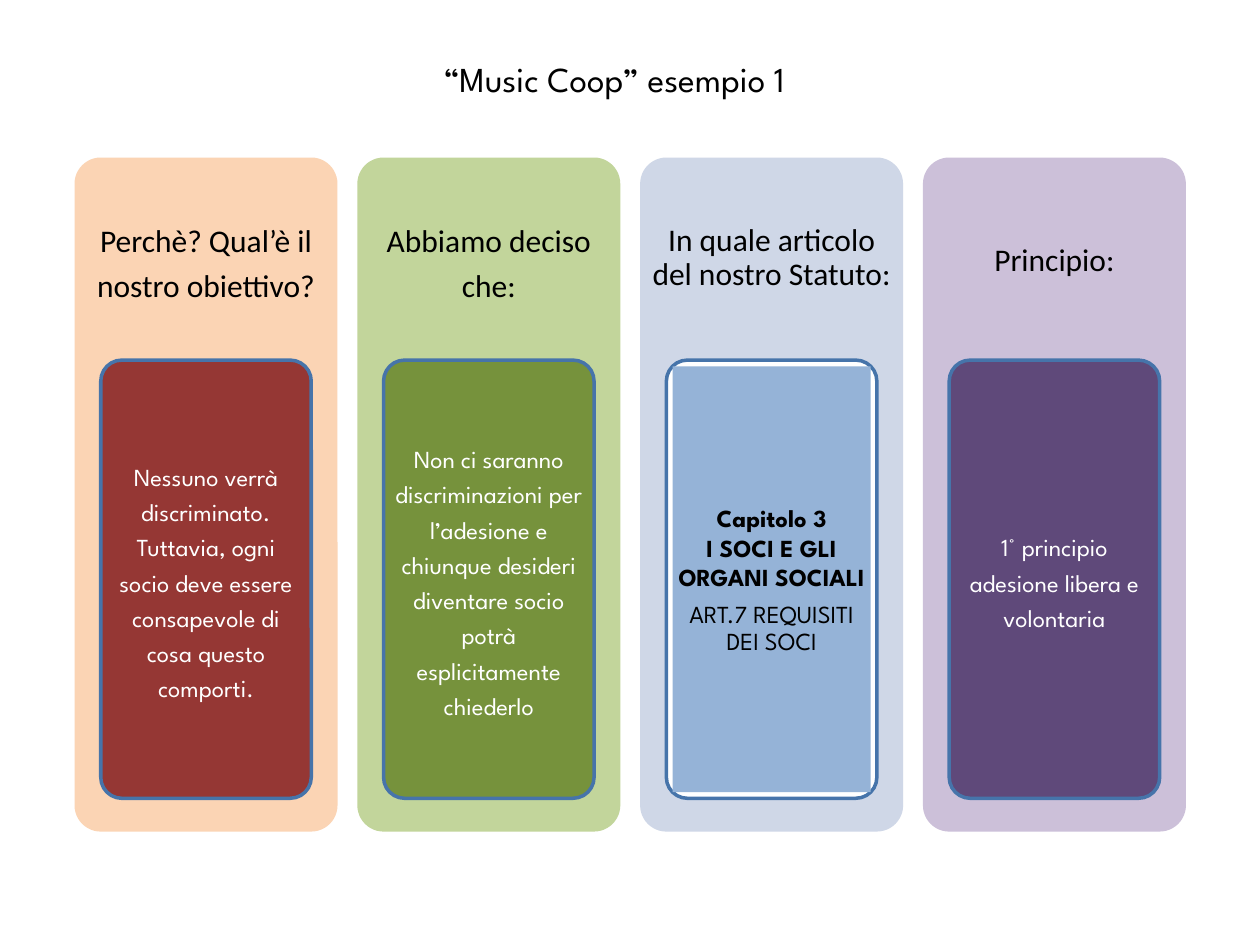
from pptx import Presentation
from pptx.dml.color import RGBColor
from pptx.enum.shapes import MSO_SHAPE as Shape
from pptx.enum.text import MSO_ANCHOR as Anchor, MSO_AUTO_SIZE as AutoSize, PP_ALIGN as Align
from pptx.util import Pt

BLACK = RGBColor(0x00, 0x00, 0x00)
WHITE = RGBColor(0xFF, 0xFF, 0xFF)
BORDER = RGBColor(0x46, 0x74, 0xAA)
PEACH = RGBColor(0xFB, 0xD4, 0xB4)
RED = RGBColor(0x95, 0x37, 0x34)
LIGHT_GREEN = RGBColor(0xC2, 0xD5, 0x9B)
GREEN = RGBColor(0x76, 0x92, 0x3C)
PALE_BLUE = RGBColor(0xCF, 0xD7, 0xE7)
BLUE = RGBColor(0x95, 0xB3, 0xD7)
LILAC = RGBColor(0xCC, 0xC0, 0xD9)
PURPLE = RGBColor(0x5F, 0x49, 0x7A)

HEADING_FONT = "Calibri"
BODY_FONT = "League Spartan"

COLUMN_LEFT, COLUMN_TOP = 42.6, 90
COLUMN_WIDTH, COLUMN_HEIGHT = 150.3, 385.2
COLUMN_STEP = 161.6
HEADING_HEIGHT = 115.6
CARD_WIDTH, CARD_HEIGHT, CARD_TOP = 120.3, 250.4, 205.8
CARD_INSET = (COLUMN_WIDTH - CARD_WIDTH) / 2
TEXT_INSET = 3.5


def add_rounded(left, top, width, height, fill):
    shape = slide.shapes.add_shape(
        Shape.ROUNDED_RECTANGLE, Pt(left), Pt(top), Pt(width), Pt(height))
    shape.adjustments[0] = 0.1
    shape.shadow.inherit = False
    shape.fill.solid()
    shape.fill.fore_color.rgb = fill
    shape.line.fill.background()
    return shape


def fill_text(shape, paragraphs, margins, font_name, size, color):
    frame = shape.text_frame
    frame.word_wrap = True
    frame.auto_size = AutoSize.NONE
    frame.vertical_anchor = Anchor.MIDDLE
    frame.margin_left, frame.margin_top, frame.margin_right, frame.margin_bottom = map(Pt, margins)
    for index, (text, spacing, before, bold) in enumerate(paragraphs):
        paragraph = frame.add_paragraph() if index else frame.paragraphs[0]
        paragraph.alignment = Align.CENTER
        paragraph.line_spacing = spacing
        if before:
            paragraph.space_before = Pt(before)
        run = paragraph.add_run()
        run.text = text
        run.font.name = font_name
        run.font.size = Pt(size)
        run.font.bold = bold
        run.font.color.rgb = color


presentation = Presentation()
presentation.slide_width, presentation.slide_height = Pt(720), Pt(540)
slide = presentation.slides.add_slide(presentation.slide_layouts[5])

title = slide.shapes.title
title.left, title.top, title.width, title.height = Pt(0), Pt(0), Pt(720), Pt(90)
fill_text(title, [("“Music Coop” esempio 1", 1.0, 0, False)],
          (7.2, 3.6, 25.2, 3.6), BODY_FONT, 20, BLACK)

columns = [
    (PEACH, RED, None, WHITE, "Perchè? Qual’è il nostro obiettivo?", 1.2,
     [("Nessuno verrà discriminato. Tuttavia, ogni socio deve essere consapevole "
       "di cosa questo comporti.", 1.2, 0, False)]),
    (LIGHT_GREEN, GREEN, None, WHITE, "Abbiamo deciso che:", 1.2,
     [("Non ci saranno discriminazioni per l’adesione e chiunque desideri diventare "
       "socio potrà esplicitamente chiederlo", 1.2, 0, False)]),
    (PALE_BLUE, WHITE, BLUE, BLACK, "In quale articolo del nostro Statuto:", 0.9,
     [("Capitolo 3", 1.0, 0, True),
      ("I SOCI E GLI ORGANI SOCIALI", 1.0, 0, True),
      ("ART.7 REQUISITI DEI SOCI", 0.9, 6.3, False)]),
    (LILAC, PURPLE, None, WHITE, "Principio:", 1.0,
     [("1° principio adesione libera e volontaria", 1.2, 0, False)]),
]

for index, (column_fill, card_fill, text_fill, text_color, heading, spacing, body) in enumerate(columns):
    left = COLUMN_LEFT + index * COLUMN_STEP
    add_rounded(left, COLUMN_TOP, COLUMN_WIDTH, COLUMN_HEIGHT, column_fill)

    heading_box = slide.shapes.add_textbox(
        Pt(left), Pt(COLUMN_TOP), Pt(COLUMN_WIDTH), Pt(HEADING_HEIGHT))
    fill_text(heading_box, [(heading, spacing, 0, False)], (5, 5, 5, 5), HEADING_FONT, 18, BLACK)

    card_left = left + CARD_INSET
    card = add_rounded(card_left, CARD_TOP, CARD_WIDTH, CARD_HEIGHT, card_fill)
    card.line.color.rgb = BORDER
    card.line.width = Pt(2)

    body_box = slide.shapes.add_textbox(
        Pt(card_left + TEXT_INSET), Pt(CARD_TOP + TEXT_INSET),
        Pt(CARD_WIDTH - 2 * TEXT_INSET), Pt(CARD_HEIGHT - 2 * TEXT_INSET))
    if text_fill:
        body_box.fill.solid()
        body_box.fill.fore_color.rgb = text_fill
    fill_text(body_box, body, (3, 2.5, 3, 2.5), BODY_FONT, 14, text_color)

presentation.save("out.pptx")
